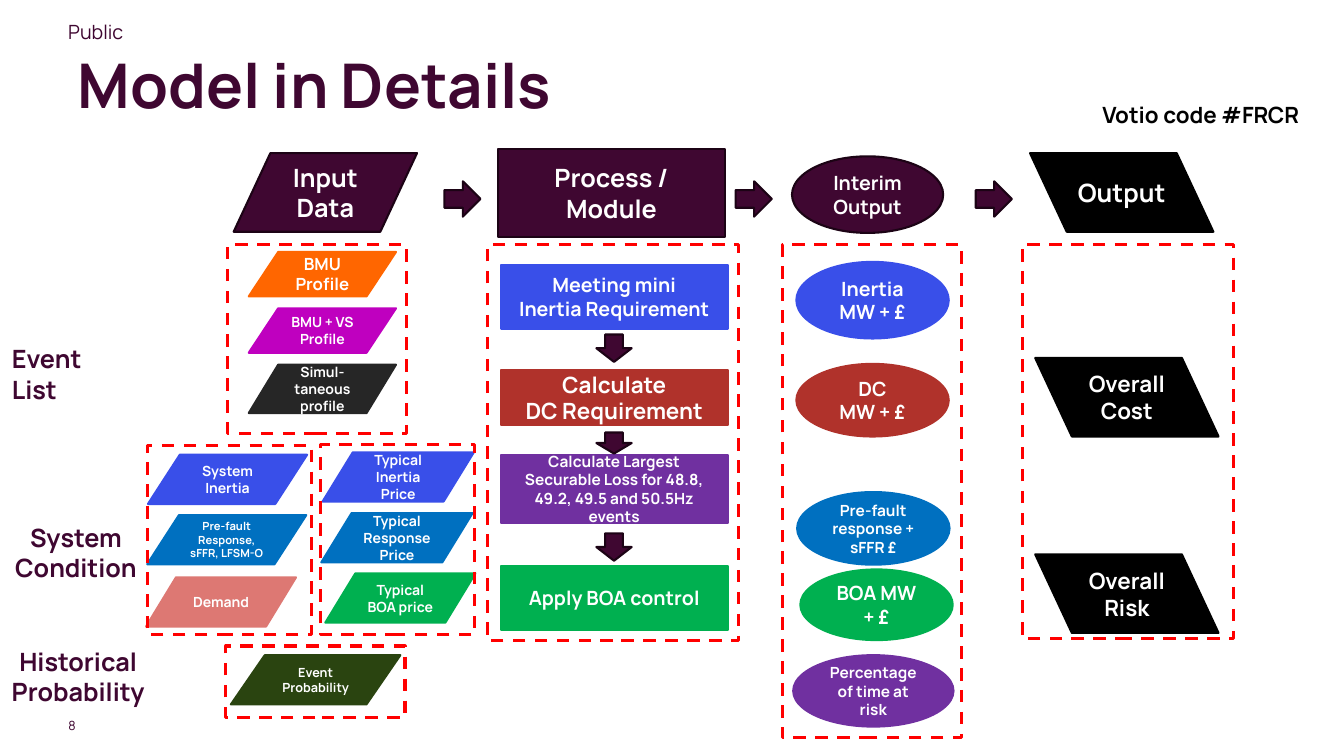
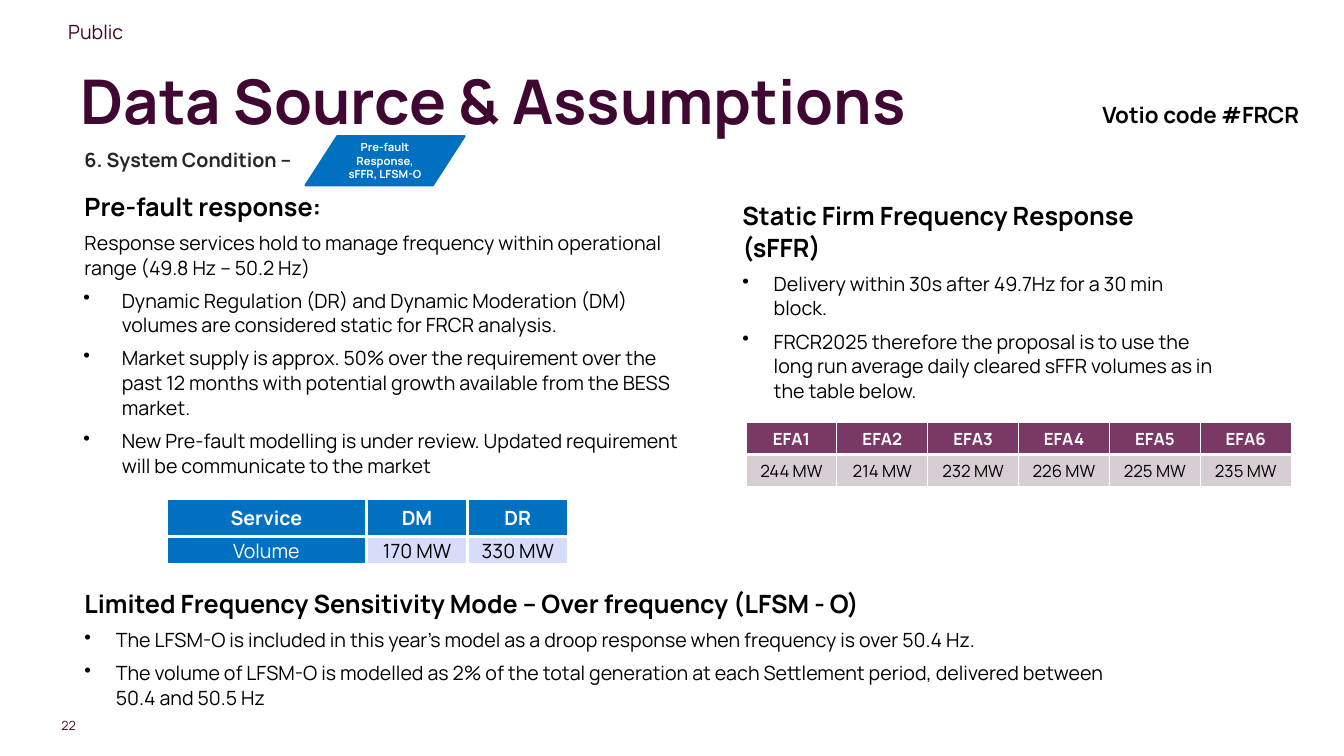
from dataclasses import dataclass

from lxml.etree import SubElement
from pptx import Presentation
from pptx.dml.color import RGBColor
from pptx.enum.dml import MSO_LINE
from pptx.enum.shapes import MSO_SHAPE
from pptx.enum.text import MSO_ANCHOR, MSO_AUTO_SIZE, PP_ALIGN
from pptx.oxml.ns import qn
from pptx.util import Cm, Pt


@dataclass(frozen=True)
class Theme:
    font: str = "Manrope"
    plum: str = "3F0731"
    plum_edge: str = "1C0315"
    mauve: str = "7A3864"
    mauve_pale: str = "D7CED3"
    orange: str = "FF6600"
    magenta: str = "BF00BF"
    charcoal: str = "262626"
    indigo: str = "394FE9"
    indigo_pale: str = "D7DCFB"
    blue: str = "0070C0"
    salmon: str = "DD7873"
    green: str = "00B050"
    olive: str = "2A4410"
    brick: str = "B0322B"
    purple: str = "7030A0"
    red: str = "FF0000"
    black: str = "000000"
    white: str = "FFFFFF"
    title: int = 44
    heading: int = 18
    subheading: int = 16
    body: int = 14
    label: int = 12
    note: int = 11
    small: int = 10
    tiny: int = 9
    mini: int = 8


THEME = Theme()
SLANTED = MSO_SHAPE.FLOWCHART_DATA
BOX = MSO_SHAPE.RECTANGLE
OVAL = MSO_SHAPE.OVAL

# All places are left, top, width, height in centimetres.
CLASSIFICATION = ("Public", (1.47, 0.38, 12.7, 0.86))
POLL_CODE = ("Votio code #FRCR", (27.53, 2.51, 6.38, 0.91))
NUMBER_AT = (0.64, 18.08, 1.27, 0.38)
PRE_FAULT = "Pre-fault\nResponse, sFFR, LFSM-O"

HEADERS = [  # shape, text, place, size
    (SLANTED, "Input Data", (5.89, 3.86, 4.62, 1.98), THEME.heading),
    (BOX, "Process / Module", (12.55, 3.76, 5.72, 2.21), THEME.heading),
    (OVAL, "Interim Output", (19.96, 3.94, 3.81, 1.93), THEME.body),
]
RIGHT_ARROWS = [(left, 4.57, 0.91, 0.89) for left in (11.2, 18.54, 24.59)]
DOWN_ARROWS = [(15.03, top, 0.89, height)
               for top, height in ((8.43, 0.69), (10.9, 0.53), (13.44, 0.69))]
OUTPUTS = [
    ("Output", (25.96, 3.86, 4.62, 1.98), THEME.heading),
    ("Overall\nCost", (26.09, 9.02, 4.62, 1.98), THEME.subheading),
    ("Overall\nRisk", (26.09, 13.97, 4.62, 1.98), THEME.subheading),
]
OUTPUT_FRAME = (25.76, 6.17, 5.33, 9.93)
GROUPS = [  # frame, shape, then text, place, fill, size of each member
    ((5.74, 6.17, 4.5, 4.75), SLANTED, [
        ("BMU Profile", (6.27, 6.35, 3.71, 1.12), THEME.orange, THEME.label),
        ("BMU + VS Profile", (6.27, 7.77, 3.71, 1.12), THEME.magenta, THEME.small),
        ("Simul-\ntaneous profile", (6.27, 9.19, 3.71, 1.22), THEME.charcoal, THEME.small),
    ]),
    ((3.71, 11.23, 4.14, 4.75), SLANTED, [
        ("System Inertia", (3.73, 11.46, 4.01, 1.24), THEME.indigo, THEME.small),
        (PRE_FAULT, (3.71, 12.98, 4.01, 1.24), THEME.blue, THEME.mini),
        ("Demand", (3.68, 14.55, 3.78, 1.24), THEME.salmon, THEME.small),
    ]),
    ((8.08, 11.2, 3.89, 4.78), SLANTED, [
        ("Typical Inertia Price", (8.13, 11.4, 3.81, 1.24), THEME.indigo, THEME.small),
        ("Typical\nResponse Price", (8.1, 12.93, 3.81, 1.24), THEME.blue, THEME.small),
        ("Typical BOA price", (8.2, 14.45, 3.78, 1.24), THEME.green, THEME.small),
    ]),
    ((5.69, 16.28, 4.52, 1.8), SLANTED, [
        ("Event Probability", (5.82, 16.51, 4.27, 1.24), THEME.olive, THEME.tiny),
    ]),
    ((12.29, 6.17, 6.32, 9.98), BOX, [
        ("Meeting mini\nInertia Requirement", (12.62, 6.68, 5.72, 1.6),
         THEME.indigo, THEME.body),
        ("Calculate\nDC Requirement", (12.62, 9.32, 5.72, 1.4),
         THEME.brick, THEME.subheading),
        ("Calculate Largest Securable Loss for 48.8, 49.2, 49.5 and 50.5Hz events",
         (12.62, 11.46, 5.72, 1.73), THEME.purple, THEME.note),
        ("Apply BOA control", (12.62, 14.27, 5.72, 1.6), THEME.green, THEME.body),
    ]),
    ((19.71, 6.17, 4.52, 12.42), OVAL, [
        ("Inertia MW + £", (20.07, 6.6, 3.84, 1.93), THEME.indigo, THEME.body),
        ("DC\nMW + £", (20.07, 9.17, 3.84, 1.83), THEME.brick, THEME.body),
        ("Pre-fault response + sFFR £", (20.09, 12.4, 3.84, 1.83), THEME.blue, THEME.note),
        ("BOA MW + £", (20.17, 14.35, 3.84, 1.78), THEME.green, THEME.body),
        ("Percentage of time at risk", (19.99, 16.51, 4.04, 1.8), THEME.purple, THEME.note),
    ]),
]
ROW_LABELS = [
    ("Event\nList", (0.3, 8.53, 3, 1.8), PP_ALIGN.LEFT),
    ("System\nCondition", (0.1, 13.03, 3.63, 1.8), PP_ALIGN.CENTER),
    ("Historical\nProbability", (-0.1, 16.15, 4.14, 1.8), PP_ALIGN.CENTER),
]

SECTION_LABEL = ("6. System Condition –", (1.78, 3.58, 6.48, 1.12))
SECTIONS = [  # place, heading, lead-in, bullets, bullet indent and hang
    ((1.78, 4.65, 15.8, 6.05), "Pre-fault response:",
     "Response services hold to manage frequency within operational range (49.8 Hz – 50.2 Hz)",
     ["Dynamic Regulation (DR) and Dynamic Moderation (DM) volumes are considered static "
      "for FRCR analysis.",
      "Market supply is approx. 50% over the requirement over the past 12 months with "
      "potential growth available from the BESS market.",
      "New Pre-fault modelling is under review. Updated requirement will be communicate "
      "to the market"], (1.04, 0.97)),
    ((18.36, 4.88, 12.55, 5.44), "Static Firm Frequency Response (sFFR)", None,
     ["Delivery within 30s after 49.7Hz for a 30 min block.",
      "FRCR2025 therefore the proposal is to use the long run average daily cleared sFFR "
      "volumes as in the table below."], (0.89, 0.79)),
    ((1.78, 14.66, 27.25, 4.19),
     "Limited Frequency Sensitivity Mode – Over frequency (LFSM - O)", None,
     ["The LFSM-O is included in this year’s model as a droop response when frequency is "
      "over 50.4 Hz.",
      "The volume of LFSM-O is modelled as 2% of the total generation at each Settlement "
      "period, delivered between 50.4 and 50.5 Hz"], (0.89, 0.79)),
]
SERVICE_ROWS = [["Service", "DM", "DR"], ["Volume", "170 MW", "330 MW"]]
EFA_ROWS = [[f"EFA{block}" for block in range(1, 7)],
            [f"{volume} MW" for volume in (244, 214, 232, 226, 225, 235)]]


def lengths(place):
    return [Cm(value) for value in place]


def rgb(color):
    return RGBColor.from_string(color)


def write(frame, text, *, size, color=THEME.black, bold=False, align=PP_ALIGN.LEFT,
          spacing=None, before=0, indent=0, hang=0):
    """Add one paragraph per line of text; a hang makes it a bullet."""
    for line in text.split("\n"):
        first = not frame.text
        para = frame.paragraphs[0] if first else frame.add_paragraph()
        properties = para._p.get_or_add_pPr()
        if indent:
            properties.set("marL", str(Cm(indent)))
            properties.set("indent", str(-Cm(hang)))
        if hang:
            SubElement(properties, qn("a:buChar")).set("char", "•")
        para.alignment = align
        if spacing:
            para.line_spacing = spacing
        if before and not first:
            para.space_before = Pt(before)
        span = para.add_run()
        span.text = line
        span.font.name = THEME.font
        span.font.size = Pt(size)
        span.font.bold = bold
        span.font.color.rgb = rgb(color)


def set_margins(target, left, top, right, bottom):
    target.margin_left, target.margin_top = Cm(left), Cm(top)
    target.margin_right, target.margin_bottom = Cm(right), Cm(bottom)


def add_text(page, place, text="", **style):
    frame = page.shapes.add_textbox(*lengths(place)).text_frame
    frame.word_wrap = True
    if text:
        write(frame, text, **style)
    return frame


def add_node(page, kind, place, fill, text="", size=THEME.body, edge=None):
    node = page.shapes.add_shape(kind, *lengths(place))
    node.shadow.inherit = False
    node.fill.solid()
    node.fill.fore_color.rgb = rgb(fill)
    node.line.color.rgb = rgb(edge or fill)
    node.line.width = Pt(1.5)
    if text:
        node.text_frame.vertical_anchor = MSO_ANCHOR.MIDDLE
        write(node.text_frame, text, size=size, color=THEME.white, bold=True,
              align=PP_ALIGN.CENTER)
    return node


def add_frame(page, place):
    frame = page.shapes.add_shape(BOX, *lengths(place))
    frame.shadow.inherit = False
    frame.fill.background()
    frame.line.color.rgb = rgb(THEME.red)
    frame.line.width = Pt(2.25)
    frame.line.dash_style = MSO_LINE.DASH


def set_borders(cell, **widths):
    properties = cell._tc.get_or_add_tcPr()
    for side in "LRTB":
        line = SubElement(properties, qn(f"a:ln{side}"), w=str(Pt(widths[side])))
        fill = SubElement(line, qn("a:solidFill"))
        SubElement(fill, qn("a:srgbClr")).set("val", THEME.white)


def add_grid(page, place, rows, widths, heights, *, dark, pale, size, line, rule,
             margins, dark_columns=0, spacing=None):
    """Add a table with a dark first row; rule is the line width below that row."""
    table = page.shapes.add_table(len(rows), len(widths), *lengths(place)).table
    for column, width in zip(table.columns, widths):
        column.width = Cm(width)
    for r, (row, height) in enumerate(zip(rows, heights)):
        table.rows[r].height = Cm(height)
        for c, text in enumerate(row):
            cell = table.cell(r, c)
            is_dark = r == 0 or c < dark_columns
            set_borders(cell, L=line, R=line, T=rule if r else line, B=line if r else rule)
            cell.fill.solid()
            cell.fill.fore_color.rgb = rgb(dark if is_dark else pale)
            cell.vertical_anchor = MSO_ANCHOR.MIDDLE
            set_margins(cell, *margins)
            write(cell.text_frame, text, size=size, bold=r == 0, align=PP_ALIGN.CENTER,
                  color=THEME.white if is_dark else THEME.black, spacing=spacing)


def add_page(deck, title, title_at, number):
    page = deck.slides.add_slide(deck.slide_layouts[5])
    holder = page.shapes.title
    holder.left, holder.top, holder.width, holder.height = lengths(title_at)
    holder.text_frame.auto_size = MSO_AUTO_SIZE.NONE
    holder.text_frame.vertical_anchor = MSO_ANCHOR.MIDDLE
    write(holder.text_frame, title, size=THEME.title, color=THEME.plum, bold=True)
    text, place = CLASSIFICATION
    add_text(page, place, text, size=THEME.body, color=THEME.plum)
    text, place = POLL_CODE
    add_text(page, place, text, size=THEME.subheading, bold=True, spacing=0.9)
    footer = add_text(page, NUMBER_AT, number, size=THEME.tiny, color=THEME.plum,
                      align=PP_ALIGN.RIGHT)
    footer.vertical_anchor = MSO_ANCHOR.MIDDLE
    set_margins(footer, 0, 0, 0, 0)
    return page


def build_model(deck):
    page = add_page(deck, "Model in Details", (1.7, 1.04, 29.21, 2.13), "8")
    for kind, text, place, size in HEADERS:
        add_node(page, kind, place, THEME.plum, text, size, THEME.plum_edge)
    for text, place, size in OUTPUTS:
        node = add_node(page, SLANTED, place, THEME.black, text, size)
        node.element.spPr.find(qn("a:xfrm")).set("flipH", "1")
        set_margins(node.text_frame, 0, 0, 0, 0)
    add_frame(page, OUTPUT_FRAME)
    for frame_at, kind, members in GROUPS:
        for text, place, fill, size in members:
            add_node(page, kind, place, fill, text, size)
        add_frame(page, frame_at)
    for kind, places in ((MSO_SHAPE.RIGHT_ARROW, RIGHT_ARROWS),
                         (MSO_SHAPE.DOWN_ARROW, DOWN_ARROWS)):
        for place in places:
            add_node(page, kind, place, THEME.plum, edge=THEME.plum_edge)
    for text, place, align in ROW_LABELS:
        label = add_text(page, place, text, size=THEME.heading, color=THEME.plum,
                         bold=True, align=align)
        set_margins(label, 0, 0.13, 0, 0.13)


def build_sources(deck):
    page = add_page(deck, "Data Source & Assumptions", (1.78, 1.19, 29.21, 2.64), "22")
    add_node(page, SLANTED, (7.7, 3.43, 4.01, 1.24), THEME.blue, PRE_FAULT, THEME.mini)
    text, place = SECTION_LABEL
    add_text(page, place, text, size=THEME.body, color=THEME.charcoal, bold=True,
             spacing=1.05, indent=0.1)
    for place, heading, lead, bullets, (indent, hang) in SECTIONS:
        frame = add_text(page, place)
        write(frame, heading, size=THEME.heading, bold=True, spacing=1.05, indent=0.1)
        if lead:
            write(frame, lead, size=THEME.body, spacing=1.05, before=6, indent=0.1)
        for bullet in bullets:
            write(frame, bullet, size=THEME.body, spacing=1.05, before=6,
                  indent=indent, hang=hang)
    add_grid(page, (4.19, 12.57, 10.13, 1.65), SERVICE_ROWS, [5.05, 2.54, 2.54],
             [0.94, 0.71], dark=THEME.blue, pale=THEME.indigo_pale, size=THEME.body,
             line=2.25, rule=2.25, margins=(0.03, 0.03, 0.03, 0), dark_columns=1)
    add_grid(page, (18.8, 10.64, 13.74, 1.62), EFA_ROWS, [2.29] * 6, [0.81] * 2,
             dark=THEME.mauve, pale=THEME.mauve_pale, size=THEME.label,
             line=1, rule=3, margins=(0.1, 0.05, 0.1, 0.05), spacing=1.07)


def main():
    deck = Presentation()
    deck.slide_width, deck.slide_height = Cm(33.87), Cm(19.05)
    build_model(deck)
    build_sources(deck)
    deck.save("out.pptx")


if __name__ == "__main__":
    main()
